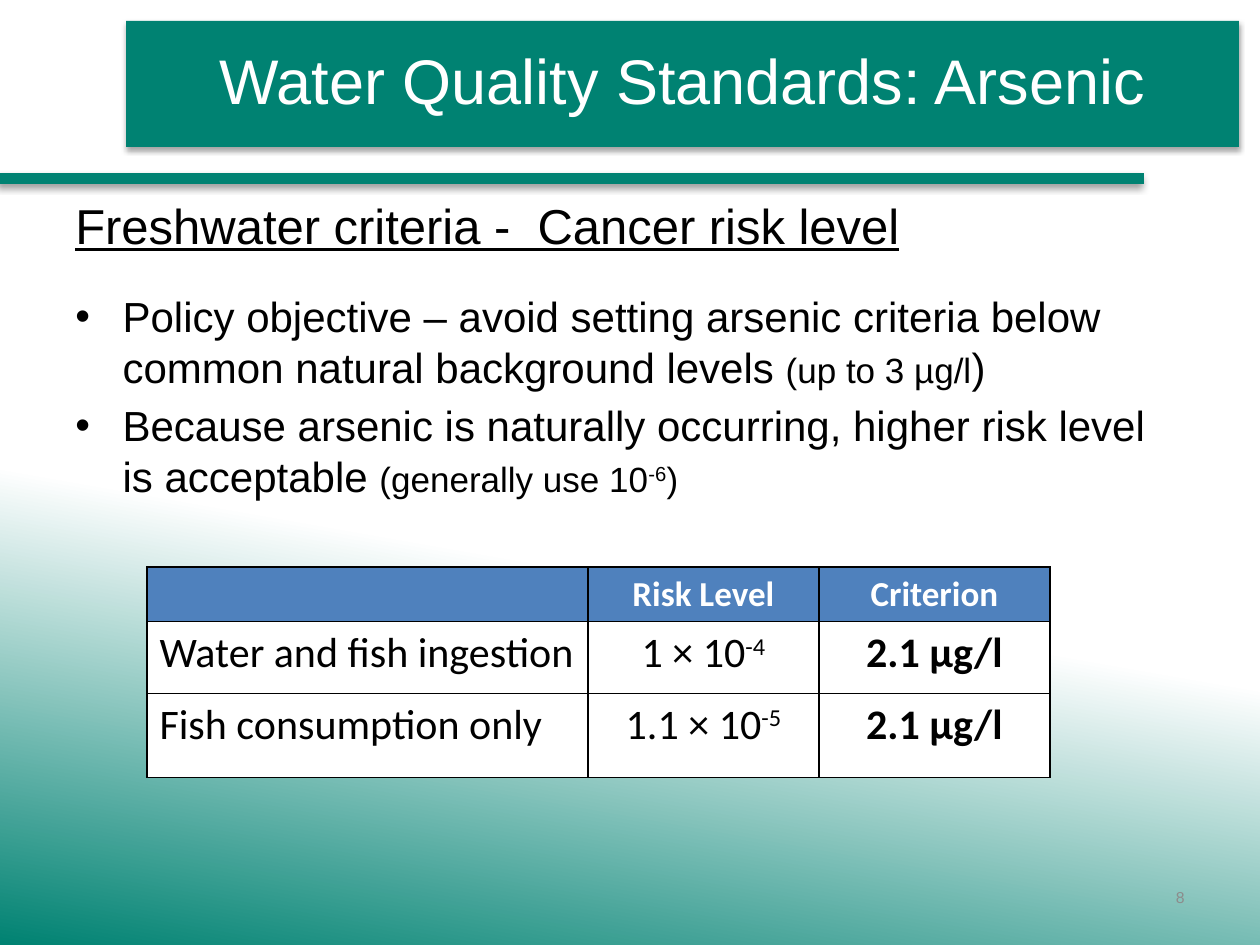
from lxml import etree
from pptx import Presentation
from pptx.dml.color import RGBColor
from pptx.enum.shapes import MSO_CONNECTOR, MSO_SHAPE
from pptx.enum.text import MSO_ANCHOR, PP_ALIGN
from pptx.oxml.ns import qn
from pptx.util import Pt

RECT, STRAIGHT = MSO_SHAPE.RECTANGLE, MSO_CONNECTOR.STRAIGHT
LEFT, CENTER, RIGHT = PP_ALIGN.LEFT, PP_ALIGN.CENTER, PP_ALIGN.RIGHT
TOP, MIDDLE = MSO_ANCHOR.TOP, MSO_ANCHOR.MIDDLE
GREEN, BLUE, WHITE, BLACK, GREY = "008272", "4F81BD", "FFFFFF", "000000", "8C8C8C"
SUPER = "30000"

BULLETS = [
    [("Policy objective – avoid setting arsenic criteria below "
      "common natural background levels ", 24), ("(up to 3 µg/l", 20), (")", 24)],
    [("Because arsenic is naturally occurring, higher risk level is acceptable ", 24),
     ("(generally use 10", 20), ("-6", 20, SUPER), (")", 20)],
]
HEADERS = ["", "Risk Level", "Criterion"]
ROWS = [
    ("Water and fish ingestion", "1 × 10", "-4", "2.1 µg/l"),
    ("Fish consumption only", "1.1 × 10", "-5", "2.1 µg/l"),
]
COL_WIDTHS = [252, 132, 132]
ROW_HEIGHTS = [29.5, 41, 48]


def color(value):
    return RGBColor.from_string(value)


def add_run(p, text, size, font="Arial", fill=BLACK, baseline=None, **formats):
    r = p.add_run()
    r.text = text
    r.font.color.rgb = color(fill)
    for name, value in {"name": font, "size": Pt(size), **formats}.items():
        setattr(r.font, name, value)
    if baseline:
        r.font._element.set("baseline", baseline)


def set_shadow(shape, alpha, blur, dist, angle):
    shape_pr = shape._element.spPr
    for old in shape_pr.findall(qn("a:effectLst")):
        shape_pr.remove(old)
    effects = etree.SubElement(shape_pr, qn("a:effectLst"))
    shadow = etree.SubElement(effects, qn("a:outerShdw"), blurRad=str(Pt(blur)),
                              dist=str(Pt(dist)), dir=str(angle * 60000),
                              algn="ctr", rotWithShape="0")
    clr = etree.SubElement(shadow, qn("a:srgbClr"), val=BLACK)
    etree.SubElement(clr, qn("a:alpha"), val=str(alpha * 1000))


def add_text_box(s, box, anchor):
    tf = s.shapes.add_textbox(*map(Pt, box)).text_frame
    tf.word_wrap = True
    tf.vertical_anchor = anchor
    return tf


def set_background(s):
    fill = s.background.fill
    fill.gradient()
    fill.gradient_angle = 260
    for stop, (position, value) in zip(fill.gradient_stops, [(0.59, WHITE), (1, GREEN)]):
        stop.position = position
        stop.color.rgb = color(value)


def add_title(s, box, text):
    sp = s.shapes.add_shape(RECT, *map(Pt, box))
    sp.fill.solid()
    sp.fill.fore_color.rgb = color(GREEN)
    sp.line.fill.background()
    set_shadow(sp, 35, 3.1, 1.8, 90)
    tf = sp.text_frame
    tf.word_wrap = True
    tf.vertical_anchor = MIDDLE
    for side in ("left", "top", "right", "bottom"):
        setattr(tf, f"margin_{side}", Pt(15))
    p = tf.paragraphs[0]
    p.alignment = CENTER
    p.line_spacing = 0.9
    add_run(p, text, 36, fill=WHITE)


def add_rule(s, x1, x2, y):
    line = s.shapes.add_connector(STRAIGHT, Pt(x1), Pt(y), Pt(x2), Pt(y))
    line.line.color.rgb = color(GREEN)
    line.line.width = Pt(6)
    set_shadow(line, 40, 4, 3, 135)


def add_body(s, box, heading, bullets):
    tf = add_text_box(s, box, TOP)
    add_run(tf.paragraphs[0], heading, 28, underline=True)
    for i, parts in enumerate(bullets):
        p = tf.add_paragraph()
        p_pr = p._p.get_or_add_pPr()
        p_pr.set("marL", str(Pt(27)))
        p_pr.set("indent", str(Pt(-27)))
        etree.SubElement(p_pr, qn("a:buFont"), typeface="Arial")
        etree.SubElement(p_pr, qn("a:buChar"), char="•")
        p.space_before = Pt(4.8 if i else 21)
        for text, size, *baseline in parts:
            add_run(p, text, size, baseline=baseline[0] if baseline else None)


def set_borders(cell):
    tc_pr = cell._tc.get_or_add_tcPr()
    for i, side in enumerate(("lnL", "lnR", "lnT", "lnB")):
        ln = etree.Element(qn(f"a:{side}"), w=str(Pt(1)))
        fill = etree.SubElement(ln, qn("a:solidFill"))
        etree.SubElement(fill, qn("a:srgbClr"), val=BLACK)
        tc_pr.insert(i, ln)


def style_cell(cell, fill, align):
    """Fill and border the cell and return its aligned paragraph."""
    cell.fill.solid()
    cell.fill.fore_color.rgb = color(fill)
    set_borders(cell)
    p = cell.text_frame.paragraphs[0]
    p.alignment = align
    return p


def add_criteria_table(s, left, top):
    size = Pt(sum(COL_WIDTHS)), Pt(sum(ROW_HEIGHTS))
    table = s.shapes.add_table(len(ROW_HEIGHTS), len(COL_WIDTHS),
                               Pt(left), Pt(top), *size).table
    for column, width in zip(table.columns, COL_WIDTHS):
        column.width = Pt(width)
    for row, height in zip(table.rows, ROW_HEIGHTS):
        row.height = Pt(height)
    for c, text in enumerate(HEADERS):
        p = style_cell(table.cell(0, c), BLUE, CENTER)
        if text:
            add_run(p, text, 20, "Calibri", WHITE, bold=True)
    for r, (use, base, exponent, criterion) in enumerate(ROWS, 1):
        p_use, p_risk, p_criterion = (
            style_cell(table.cell(r, c), WHITE, align)
            for c, align in enumerate((LEFT, CENTER, CENTER)))
        add_run(p_use, use, 24, "Calibri", bold=False)
        add_run(p_risk, base, 24, "Calibri", bold=False)
        add_run(p_risk, exponent, 24, "Calibri", baseline=SUPER, bold=False)
        add_run(p_criterion, criterion, 24, "Calibri", bold=True)


def add_page_number(s, box, number):
    p = add_text_box(s, box, MIDDLE).paragraphs[0]
    p.alignment = RIGHT
    add_run(p, number, 9, fill=GREY)


def main():
    prs = Presentation()
    prs.slide_width, prs.slide_height = Pt(720), Pt(540)
    s = prs.slides.add_slide(prs.slide_layouts[6])
    set_background(s)
    add_title(s, (72, 12, 636, 72), "Water Quality Standards: Arsenic")
    add_rule(s, 0, 654, 102)
    add_body(s, (36, 108, 648, 402), "Freshwater criteria -  Cancer risk level", BULLETS)
    add_criteria_table(s, 84, 324)
    add_page_number(s, (516, 498, 168, 29), "8")
    prs.save("out.pptx")


if __name__ == "__main__":
    main()
